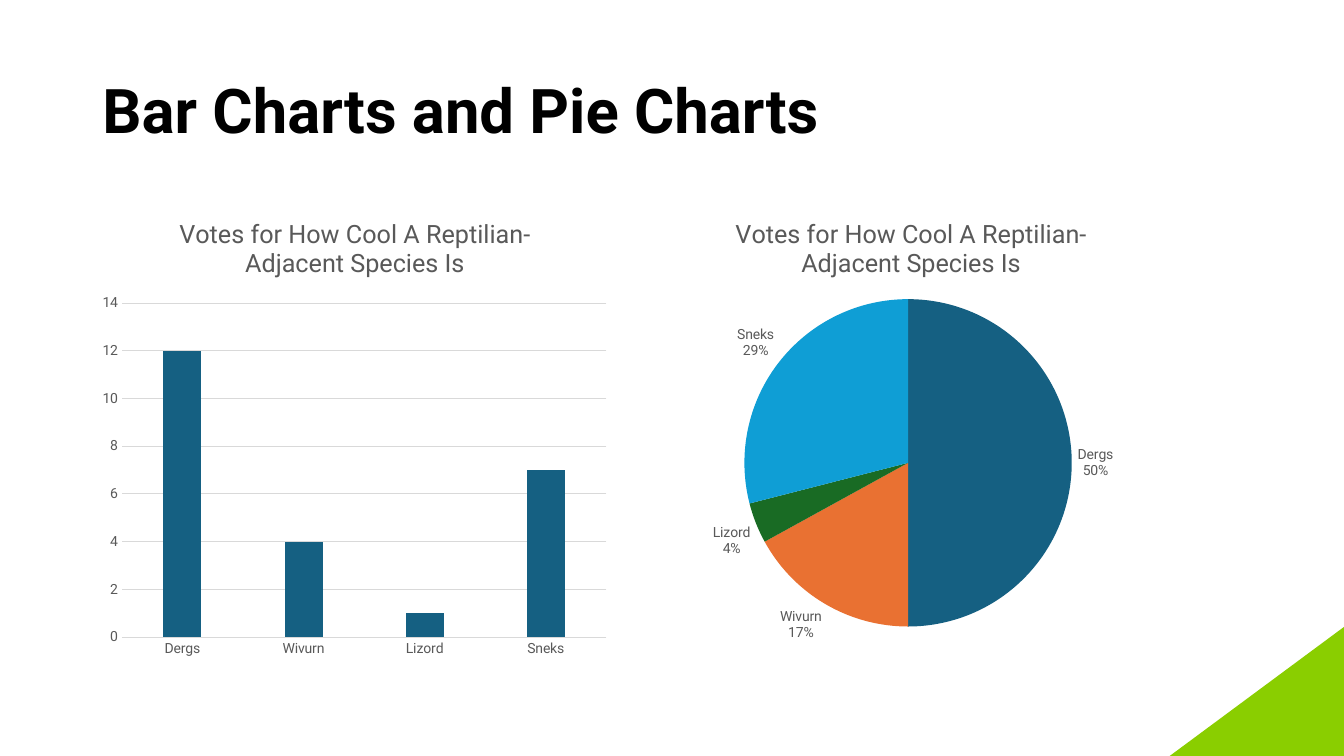
import pptx
import pptx.util
import pptx.chart.data
import pptx.dml.color
import pptx.enum.chart
import pptx.enum.shapes
import pptx.enum.text
import pptx.oxml

Cm, Pt = pptx.util.Cm, pptx.util.Pt
kinds = pptx.enum.chart
GREY, RULE, BLUE = "595959", "D9D9D9", "156082"


def color(text):
    return pptx.dml.color.RGBColor.from_string(text)


def style(font, size, tone, bold=False):
    font.name, font.size, font.bold = "Roboto", Pt(size), bold
    font.color.rgb = color(tone)


deck = pptx.Presentation()
deck.slide_width, deck.slide_height = Cm(33.87), Cm(19.05)
slide = deck.slides.add_slide(deck.slide_layouts[6])

# Title
box = slide.shapes.add_textbox(Cm(2.33), Cm(1.01), Cm(29.21), Cm(3.68))
frame = box.text_frame
frame.word_wrap = True
frame.vertical_anchor = pptx.enum.text.MSO_ANCHOR.MIDDLE
frame.text = "Bar Charts and Pie Charts"
frame.paragraphs[0].line_spacing = 0.9
style(frame.paragraphs[0].runs[0].font, 44, "000000", True)

# Green corner
corner = slide.shapes.add_shape(
    pptx.enum.shapes.MSO_SHAPE.RIGHT_TRIANGLE,
    Cm(29.48), Cm(15.8), Cm(4.39), Cm(3.25))
corner.shadow.inherit = False
corner.fill.solid()
corner.fill.fore_color.rgb = color("8ACE00")
corner.line.fill.background()
corner._element.spPr.xfrm.set("flipH", "1")

# Both charts: type, left, width, votes, plot area as shares of the chart
plans = [
    (kinds.XL_CHART_TYPE.COLUMN_CLUSTERED, 2.33, 13.23, (12, 4, 1, 7),
     (0.056, 0.225, 0.923, 0.713)),
    (kinds.XL_CHART_TYPE.PIE, 16.23, 13.46, (50, 17, 4, 29),
     (0.188, 0.216, 0.613, 0.7)),
]
charts = []
for kind, left, width, votes, area in plans:
    data = pptx.chart.data.CategoryChartData()
    data.categories = ["Dergs", "Wivurn", "Lizord", "Sneks"]
    data.add_series("Series 1", votes)
    chart = slide.shapes.add_chart(
        kind, Cm(left), Cm(4.98), Cm(width), Cm(11.81), data).chart
    style(chart.font, 10, GREY)
    chart.has_legend = False
    head = chart.chart_title.text_frame
    head.text = "Votes for How Cool A Reptilian-Adjacent Species Is"
    style(head.paragraphs[0].runs[0].font, 18, GREY)

    # Fixed plot area
    sides = "".join(f'<c:{n} val="{v}"/>' for n, v in zip("xywh", area))
    layout = pptx.oxml.parse_xml(
        '<c:layout xmlns:c="http://schemas.openxmlformats.org/drawingml/2006/chart">'
        '<c:manualLayout><c:layoutTarget val="inner"/><c:xMode val="edge"/>'
        f'<c:yMode val="edge"/>{sides}</c:manualLayout></c:layout>')
    plot = chart._chartSpace.chart.plotArea
    for old in plot.xpath("c:layout"):
        plot.remove(old)
    plot.insert(0, layout)
    charts.append(chart)
bar, pie = charts

# Bars and axes
bars = bar.plots[0]
bars.gap_width, bars.overlap, bars.vary_by_categories = 219, -27, False
fill = bars.series[0].format.fill
fill.solid()
fill.fore_color.rgb = color(BLUE)
for axis in (bar.category_axis, bar.value_axis):
    axis.major_tick_mark = axis.minor_tick_mark = kinds.XL_TICK_MARK.NONE
    style(axis.tick_labels.font, 10, GREY)
scale = bar.value_axis
scale.minimum_scale, scale.maximum_scale, scale.major_unit = 0, 14, 2
scale.has_major_gridlines = True
scale.format.line.fill.background()
for line in (bar.category_axis.format.line, scale.major_gridlines.format.line):
    line.color.rgb = color(RULE)
    line.width = Pt(0.75)

# Slices and labels
pies = pie.plots[0]
pies.vary_by_categories = True
for i, tone in enumerate([BLUE, "E97132", "196B24", "0F9ED5"]):
    fill = pies.series[0].points[i].format.fill
    fill.solid()
    fill.fore_color.rgb = color(tone)
labels = pies.series[0].data_labels
labels.show_category_name = labels.show_percentage = True
labels.show_value = False
labels.number_format, labels.number_format_is_linked = "0%", False
labels.position = kinds.XL_LABEL_POSITION.OUTSIDE_END
style(labels.font, 10, GREY)

deck.save("out.pptx")
